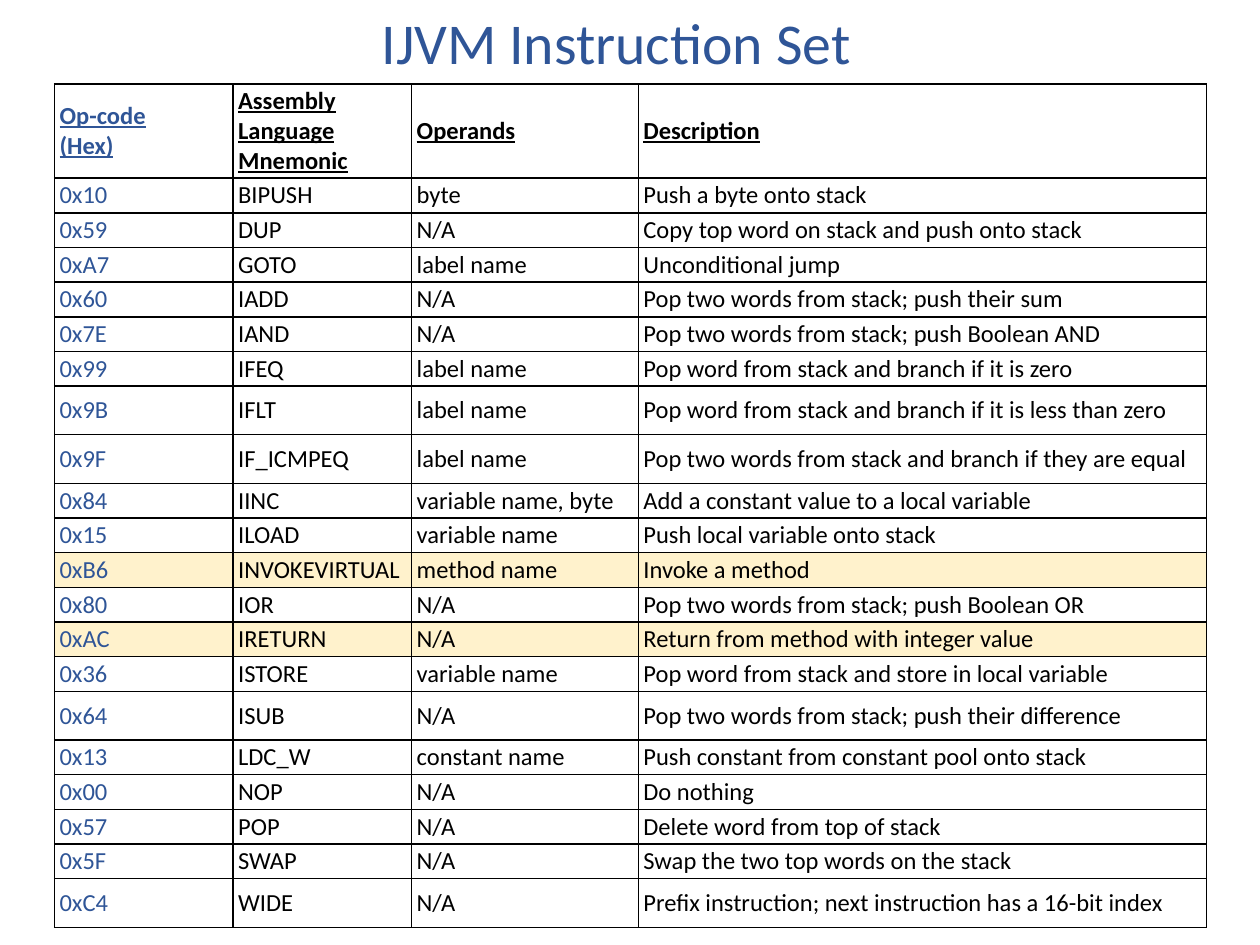
from dataclasses import dataclass

import lxml.etree
import pptx
import pptx.dml.color
import pptx.enum.text
import pptx.oxml.ns
import pptx.util

Cm, Pt = pptx.util.Cm, pptx.util.Pt
ANCHOR = pptx.enum.text.MSO_ANCHOR
ALIGN = pptx.enum.text.PP_ALIGN

FONT = "Calibri"
COLORS = {"blue": "2F5597", "black": "000000", "highlight": "FFF2CC"}
COLUMN_WIDTHS = (3.6, 3.6, 4.57, 11.45)
HEADER_HEIGHT, ROW_HEIGHT, TALL_HEIGHT = 1.9, 0.7, 0.98
HEADERS = ("Op-code\n(Hex)", "Assembly\nLanguage\nMnemonic", "Operands", "Description")


@dataclass
class Instruction:
    opcode: str
    mnemonic: str
    operands: str
    description: str
    tall: bool = False
    highlighted: bool = False


INSTRUCTIONS = [
    Instruction("0x10", "BIPUSH", "byte", "Push a byte onto stack"),
    Instruction("0x59", "DUP", "N/A", "Copy top word on stack and push onto stack"),
    Instruction("0xA7", "GOTO", "label name", "Unconditional jump"),
    Instruction("0x60", "IADD", "N/A", "Pop two words from stack; push their sum"),
    Instruction("0x7E", "IAND", "N/A", "Pop two words from stack; push Boolean AND"),
    Instruction("0x99", "IFEQ", "label name", "Pop word from stack and branch if it is zero"),
    Instruction("0x9B", "IFLT", "label name",
                "Pop word from stack and branch if it is less than zero", tall=True),
    Instruction("0x9F", "IF_ICMPEQ", "label name",
                "Pop two words from stack and branch if they are equal", tall=True),
    Instruction("0x84", "IINC", "variable name, byte", "Add a constant value to a local variable"),
    Instruction("0x15", "ILOAD", "variable name", "Push local variable onto stack"),
    Instruction("0xB6", "INVOKEVIRTUAL", "method name", "Invoke a method", highlighted=True),
    Instruction("0x80", "IOR", "N/A", "Pop two words from stack; push Boolean OR"),
    Instruction("0xAC", "IRETURN", "N/A", "Return from method with integer value", highlighted=True),
    Instruction("0x36", "ISTORE", "variable name", "Pop word from stack and store in local variable"),
    Instruction("0x64", "ISUB", "N/A", "Pop two words from stack; push their difference", tall=True),
    Instruction("0x13", "LDC_W", "constant name", "Push constant from constant pool onto stack"),
    Instruction("0x00", "NOP", "N/A", "Do nothing"),
    Instruction("0x57", "POP", "N/A", "Delete word from top of stack"),
    Instruction("0x5F", "SWAP", "N/A", "Swap the two top words on the stack"),
    Instruction("0xC4", "WIDE", "N/A",
                "Prefix instruction; next instruction has a 16-bit index", tall=True),
]


def rgb(name: str) -> pptx.dml.color.RGBColor:
    return pptx.dml.color.RGBColor.from_string(COLORS[name])


def add_text(p, text: str, size: float, color: str, heading: bool = False) -> None:
    for i, line in enumerate(text.split("\n")):
        if i:
            p.add_line_break()
        r = p.add_run()
        r.text = line
        r.font.name, r.font.size = FONT, Pt(size)
        r.font.bold = r.font.underline = heading
        r.font.color.rgb = rgb(color)


def add_title(s, text: str) -> None:
    sp = s.shapes.add_textbox(Cm(0.55), Cm(0.15), Cm(23.75), Cm(1.55))
    tf = sp.text_frame
    tf.word_wrap = True
    tf.vertical_anchor = ANCHOR.MIDDLE
    p = tf.paragraphs[0]
    p.alignment, p.line_spacing = ALIGN.CENTER, 0.9
    add_text(p, text, 33, "blue")


def add_borders(cell) -> None:
    tcPr = cell._tc.get_or_add_tcPr()
    qn = pptx.oxml.ns.qn
    for side in ("a:lnL", "a:lnR", "a:lnT", "a:lnB"):
        ln = lxml.etree.SubElement(tcPr, qn(side), w=str(Pt(1)))
        fill = lxml.etree.SubElement(ln, qn("a:solidFill"))
        lxml.etree.SubElement(fill, qn("a:srgbClr"), val=COLORS["black"])


def fill_cell(cell, text: str, color: str, heading: bool, highlighted: bool) -> None:
    cell.vertical_anchor = ANCHOR.MIDDLE
    cell.margin_left = cell.margin_right = Cm(0.1)
    cell.margin_top = cell.margin_bottom = Cm(0.05)
    add_borders(cell)
    if highlighted:
        cell.fill.solid()
        cell.fill.fore_color.rgb = rgb("highlight")
    else:
        cell.fill.background()
    add_text(cell.text_frame.paragraphs[0], text, 14, color, heading)


def add_instruction_table(s, left: float, top: float) -> None:
    heights = [HEADER_HEIGHT] + [TALL_HEIGHT if i.tall else ROW_HEIGHT for i in INSTRUCTIONS]
    table = s.shapes.add_table(len(heights), len(COLUMN_WIDTHS), Cm(left), Cm(top),
                               Cm(sum(COLUMN_WIDTHS)), Cm(sum(heights))).table
    table.first_row = table.horz_banding = False
    for column, width in zip(table.columns, COLUMN_WIDTHS):
        column.width = Cm(width)
    for row, height in zip(table.rows, heights):
        row.height = Cm(height)

    rows = [(HEADERS, True, False)]
    rows += [((i.opcode, i.mnemonic, i.operands, i.description), False, i.highlighted)
             for i in INSTRUCTIONS]
    for row, (texts, heading, highlighted) in enumerate(rows):
        for col, text in enumerate(texts):
            color = "black" if col else "blue"
            fill_cell(table.cell(row, col), text, color, heading, highlighted)


def main() -> None:
    prs = pptx.Presentation()
    prs.slide_width, prs.slide_height = Cm(25.4), Cm(19.05)
    s = prs.slides.add_slide(prs.slide_layouts[6])

    # Title
    add_title(s, "IJVM Instruction Set")

    # Instruction table
    add_instruction_table(s, 1.1, 1.69)

    prs.save("out.pptx")


if __name__ == "__main__":
    main()
